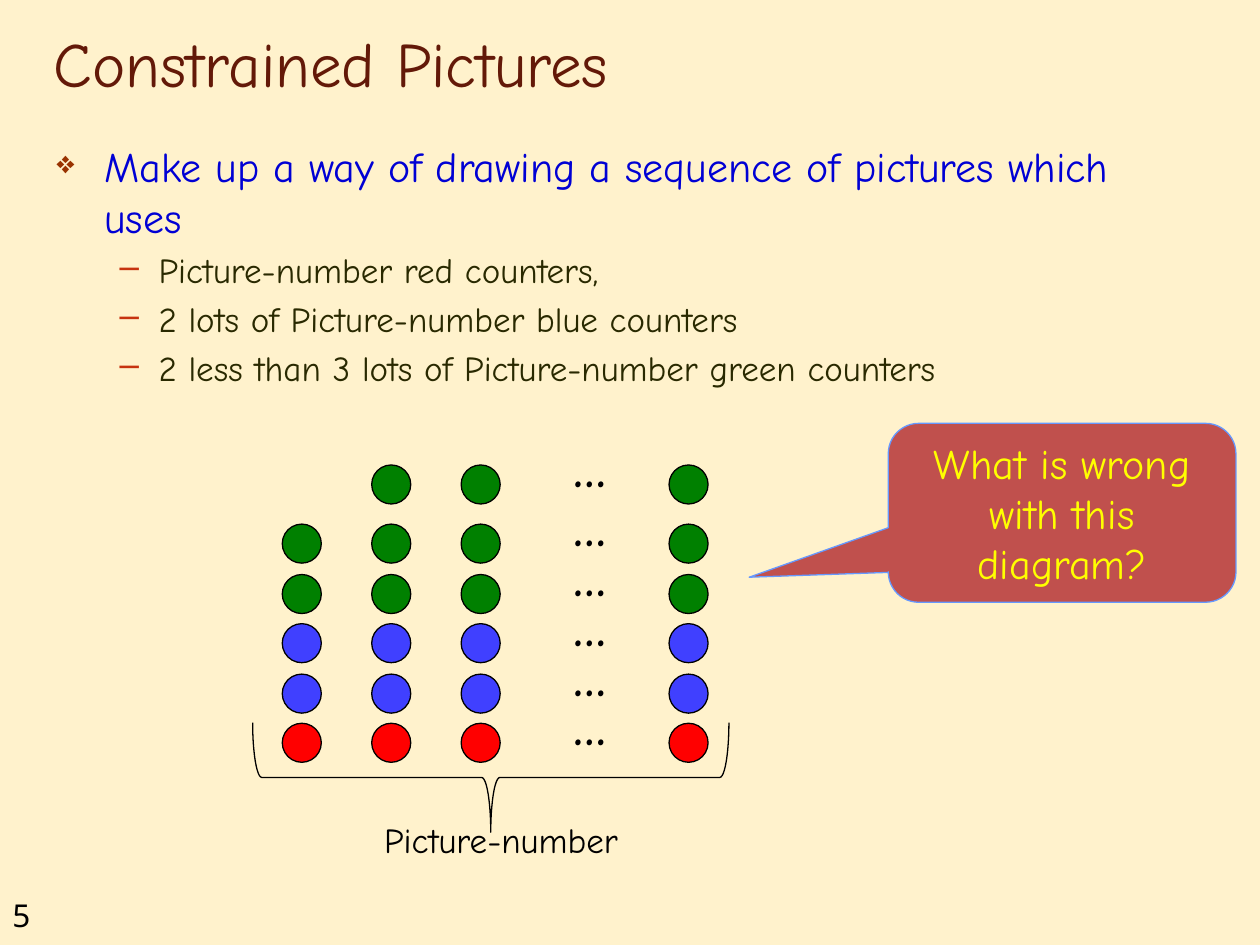
from typing import NamedTuple, Optional

from lxml import etree
from pptx import Presentation
from pptx.dml.color import RGBColor
from pptx.enum import shapes, text
from pptx.oxml import ns
from pptx.util import Inches, Pt

BACKGROUND = RGBColor(0xFF, 0xF2, 0xCC)
BLACK = RGBColor(0, 0, 0)
RED = RGBColor(0xFF, 0, 0)
BLUE = RGBColor(0x40, 0x40, 0xFF)
GREEN = RGBColor(0, 0x80, 0)
YELLOW = RGBColor(0xFF, 0xFF, 0)
TITLE_BROWN = RGBColor(0x63, 0x19, 0x08)
TASK_BLUE = RGBColor(0, 0, 0xD4)
DETAIL_OLIVE = RGBColor(0x29, 0x29, 0)
CALLOUT_FILL = RGBColor(0xC0, 0x50, 0x4D)
CALLOUT_LINE = RGBColor(0x66, 0x99, 0xFF)
FONT = "Comic Neue"
COUNTER_SIZE = 0.31
COUNTER_LEFTS = (2.24, 2.95, 3.66, 5.31)


class Box(NamedTuple):
    left: float
    top: float
    width: float
    height: float

    def lengths(self) -> list:
        return [Inches(value) for value in self]


class Style(NamedTuple):
    size: float
    color: RGBColor
    name: str = FONT
    bold: bool = False


class Bullet(NamedTuple):
    character: str
    color: str
    percent: int
    margin: float
    hanging: float


class Item(NamedTuple):
    words: str
    style: Style
    bullet: Optional[Bullet] = None
    level: int = 0


class CounterRow(NamedTuple):
    top: float
    color: RGBColor
    first_column: int = 0


TASK_BULLET = Bullet("❖", "993300", 75, 0.38, 0.38)
DETAIL_BULLET = Bullet("–", "C6330F", 100, 0.81, 0.31)
TASK = Style(24, TASK_BLUE)
DETAIL = Style(20, DETAIL_OLIVE)
DOTS = Style(28, BLACK, bold=True)

BODY = [Item("Make up a way of drawing a sequence of pictures which uses", TASK, TASK_BULLET)] + [
    Item(words, DETAIL, DETAIL_BULLET, 1)
    for words in (
        "Picture-number red counters,",
        "2 lots of Picture-number blue counters",
        "2 less than 3 lots of Picture-number green counters",
    )
]
ROWS = [
    CounterRow(5.74, RED),
    CounterRow(5.35, BLUE),
    CounterRow(4.95, BLUE),
    CounterRow(4.56, GREEN),
    CounterRow(4.16, GREEN),
    CounterRow(3.69, GREEN, first_column=1),
]


def apply(target, values: dict) -> None:
    for name, value in values.items():
        setattr(target, name, value)


def set_bullet(paragraph, bullet: Bullet) -> None:
    properties = paragraph._p.get_or_add_pPr()
    properties.set("marL", str(Inches(bullet.margin)))
    properties.set("indent", str(-Inches(bullet.hanging)))
    color = etree.SubElement(properties, ns.qn("a:buClr"))
    etree.SubElement(color, ns.qn("a:srgbClr"), val=bullet.color)
    etree.SubElement(properties, ns.qn("a:buSzPct"), val=str(bullet.percent * 1000))
    etree.SubElement(properties, ns.qn("a:buChar"), char=bullet.character)


def write(frame, items: list[Item], alignment=text.PP_ALIGN.LEFT) -> None:
    for index, item in enumerate(items):
        paragraph = frame.add_paragraph() if index else frame.paragraphs[0]
        apply(paragraph, {"alignment": alignment, "level": item.level})
        if item.bullet:
            paragraph.space_before = Pt(item.style.size * 0.2)
            set_bullet(paragraph, item.bullet)
        run = paragraph.add_run()
        run.text = item.words
        style = item.style
        apply(run.font, {"size": Pt(style.size), "name": style.name, "bold": style.bold})
        run.font.color.rgb = style.color


def add_text(slide, box: Box, items: list[Item], wrap: bool = True,
             anchor=text.MSO_ANCHOR.TOP) -> None:
    frame = slide.shapes.add_textbox(*box.lengths()).text_frame
    apply(frame, {"word_wrap": wrap, "vertical_anchor": anchor})
    write(frame, items)


def add_outlined(slide, kind, box: Box, fill: Optional[RGBColor] = None,
                 line: RGBColor = BLACK):
    shape = slide.shapes.add_shape(kind, *box.lengths())
    shape.shadow.inherit = False
    if fill is None:
        shape.fill.background()
    else:
        shape.fill.solid()
        shape.fill.fore_color.rgb = fill
    shape.line.color.rgb = line
    shape.line.width = Pt(0.75)
    return shape


def add_counter_row(slide, row: CounterRow) -> None:
    for left in COUNTER_LEFTS[row.first_column:]:
        box = Box(left, row.top, COUNTER_SIZE, COUNTER_SIZE)
        add_outlined(slide, shapes.MSO_SHAPE.OVAL, box, row.color)
    add_text(slide, Box(4.45, row.top - 0.26, 0.63, 0.57), [Item("…", DOTS)])


def add_brace(slide) -> None:
    brace = add_outlined(slide, shapes.MSO_SHAPE.LEFT_BRACE, Box(3.46, 4.28, 0.87, 3.78))
    brace.rotation = 270


def add_callout(slide) -> None:
    callout = add_outlined(slide, shapes.MSO_SHAPE.ROUNDED_RECTANGULAR_CALLOUT,
                           Box(7.05, 3.36, 2.76, 1.42), CALLOUT_FILL, CALLOUT_LINE)
    for index, value in enumerate((-0.9, 0.36, 0.17)):
        callout.adjustments[index] = value
    apply(callout.text_frame, {"word_wrap": True, "vertical_anchor": text.MSO_ANCHOR.MIDDLE})
    write(callout.text_frame, [Item("What is wrong with this diagram?", Style(24, YELLOW))],
          text.PP_ALIGN.CENTER)


def main() -> None:
    presentation = Presentation()
    apply(presentation, {"slide_width": Inches(10), "slide_height": Inches(7.5)})
    slide = presentation.slides.add_slide(presentation.slide_layouts[6])
    slide.background.fill.solid()
    slide.background.fill.fore_color.rgb = BACKGROUND

    add_text(slide, Box(0, 7.06, 0.75, 0.4), [Item("5", Style(18, BLACK, "Noto Sans"))])
    add_text(slide, Box(0.33, 0.17, 8.5, 0.67),
             [Item("Constrained Pictures", Style(36, TITLE_BROWN))],
             anchor=text.MSO_ANCHOR.BOTTOM)
    add_text(slide, Box(0.35, 1.07, 9.21, 2.36), BODY)
    for row in ROWS:
        add_counter_row(slide, row)
    add_brace(slide)
    add_text(slide, Box(2.95, 6.45, 2.19, 0.44),
             [Item("Picture-number", Style(20, BLACK))], wrap=False)
    add_callout(slide)
    presentation.save("out.pptx")


if __name__ == "__main__":
    main()
